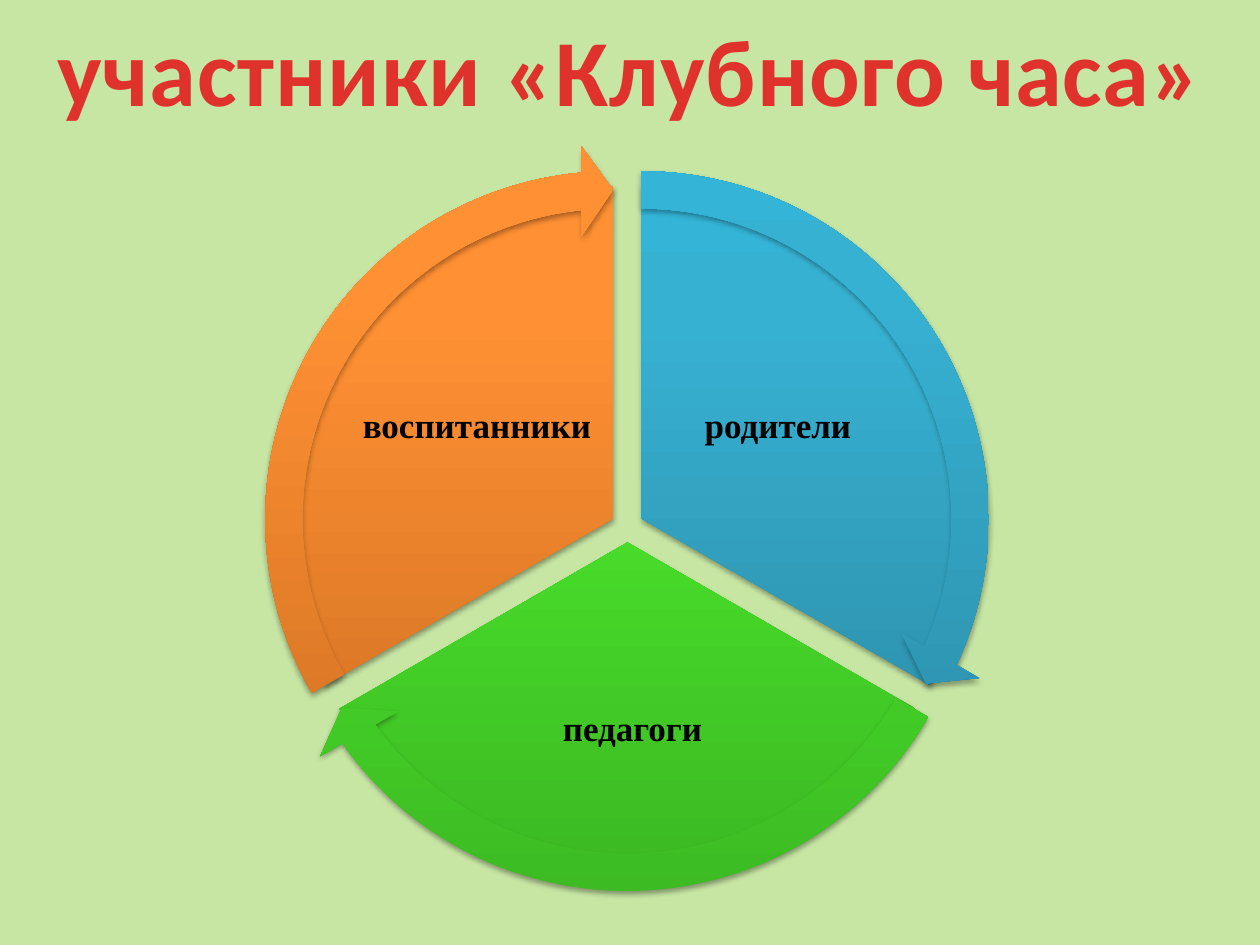
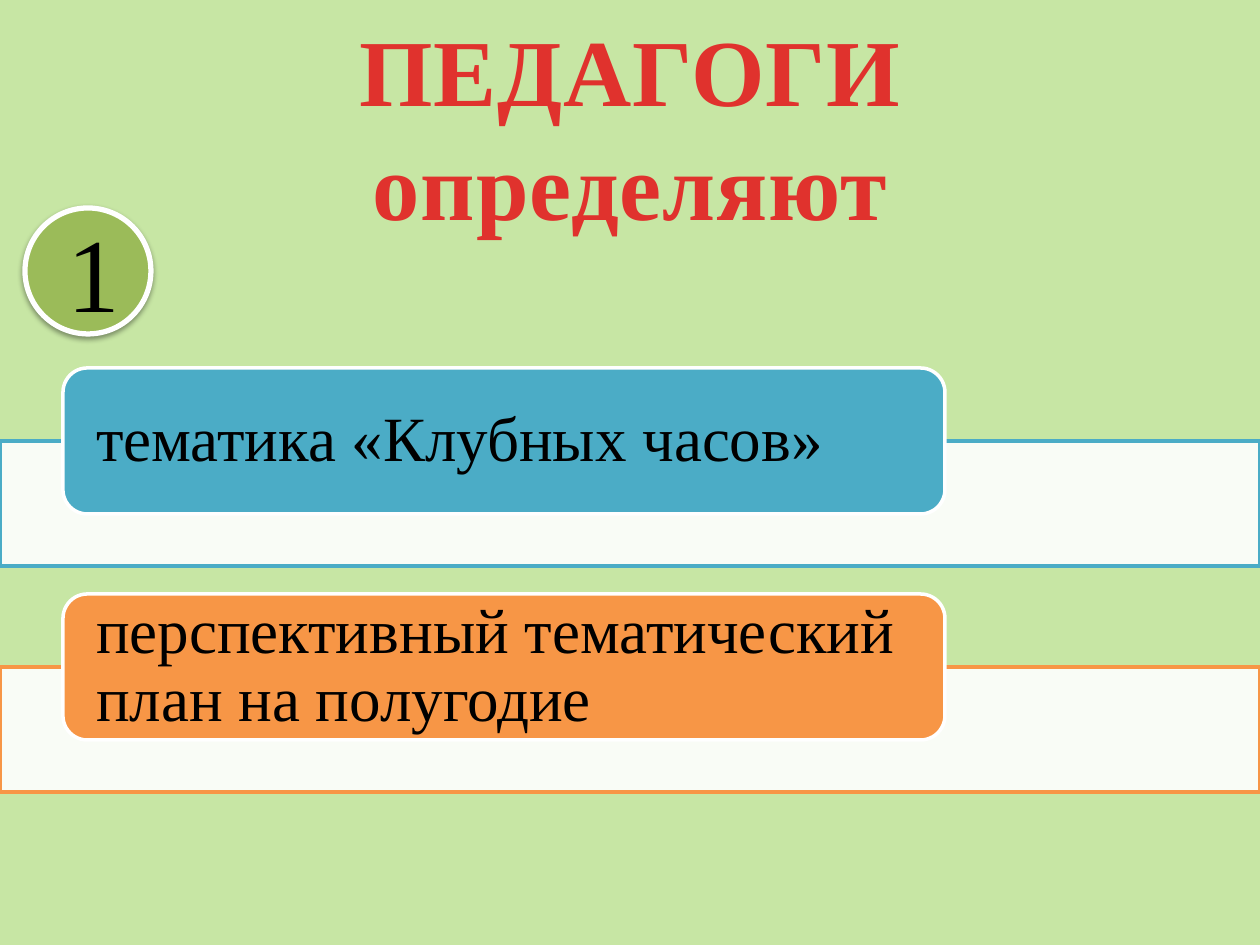
from copy import deepcopy
from dataclasses import dataclass

from lxml import etree
from pptx import Presentation
from pptx import util as u
from pptx.dml.color import RGBColor
from pptx.enum import shapes, text
from pptx.oxml.ns import qn

PX = 914400 / 126
FULL_TURN = 216
ARROW_HEAD = 3.28


@dataclass(frozen=True)
class Theme:
    """Colours, fonts and type sizes of the deck."""
    background: str = "C7E6A4"
    ink: str = "000000"
    white: str = "FFFFFF"
    blue: str = "4BACC6"
    orange: str = "F79646"
    olive: str = "9BBB59"
    title_stops: tuple = ((25, "E0322D"), (100, "A2201C"))
    blue_stops: tuple = ((0, "2A88A2"), (80, "37B1D2"), (100, "34B4D6"))
    green_stops: tuple = ((0, "3CB923"), (80, "4EF02E"), (100, "4CF52A"))
    orange_stops: tuple = ((0, "CC6E20"), (80, "FF9034"), (100, "FF9136"))
    sans: str = "Calibri"
    serif: str = "Times New Roman"
    title_size: int = 54
    label_size: int = 20
    item_size: int = 36
    number_size: int = 60


def px(*lengths):
    """Turn pixel lengths into EMU."""
    return [u.Emu(round(length * PX)) for length in lengths]


def rgb(value):
    """Turn a hex string into a colour."""
    return RGBColor.from_string(value)


def set_gradient(element, fill, stops, angle):
    """Fill with a linear gradient; the angle runs counter-clockwise."""
    fill.gradient()
    fill.gradient_angle = angle
    stop_list = element.find(".//" + qn("a:gsLst"))
    for _ in stops[2:]:
        stop_list.append(deepcopy(stop_list[-1]))
    for stop, (position, colour) in zip(fill.gradient_stops, stops):
        stop.position = position / 100
        stop.color.rgb = rgb(colour)


class Page:
    """Holds the theme and the current slide."""

    def __init__(self, deck, theme):
        """Set the background shared by all slides."""
        self.deck, self.theme, self.slide = deck, theme, None
        background = deck.slide_master.background.fill
        background.solid()
        background.fore_color.rgb = rgb(theme.background)

    def start(self, title, font, left, width):
        """Add a slide with its title."""
        theme = self.theme
        self.slide = self.deck.slides.add_slide(self.deck.slide_layouts[5])
        box = self.slide.shapes.title
        box.left, box.top, box.width, box.height = px(left, 6, width, 127)
        frame = box.text_frame
        frame.text = title
        frame.auto_size = text.MSO_AUTO_SIZE.NONE
        frame.word_wrap = False
        frame.vertical_anchor = text.MSO_ANCHOR.TOP
        for para in frame.paragraphs:
            para.alignment = text.PP_ALIGN.CENTER
            for span in para.runs:
                span.font.name, span.font.bold = font, True
                span.font.size = u.Pt(theme.title_size)
                set_gradient(span._r, span.font.fill, theme.title_stops, 270)
                span._r.get_or_add_rPr().set("spc", "50")

    def shape(self, kind, place, fill, line=None, weight=2, adjustments=()):
        """Add a preset shape with a solid or gradient fill."""
        box = self.slide.shapes.add_shape(kind, *px(*place))
        box.shadow.inherit = False
        for index, value in enumerate(adjustments):
            box.adjustments[index] = value
        if isinstance(fill, str):
            box.fill.solid()
            box.fill.fore_color.rgb = rgb(fill)
        else:
            set_gradient(box._element, box.fill, fill, 90)
        if line:
            box.line.color.rgb = rgb(line)
            box.line.width = u.Pt(weight)
        else:
            box.line.fill.background()
        return box

    def shadow(self, box, opacity, distance):
        """Drop a soft black shadow straight down."""
        effects = box._element.spPr.find(qn("a:effectLst"))
        outer = etree.SubElement(effects, qn("a:outerShdw"), blurRad=str(u.Pt(3.1)),
                                 dist=str(u.Pt(distance)), dir="5400000", rotWithShape="0")
        colour = etree.SubElement(outer, qn("a:srgbClr"), val=self.theme.ink)
        etree.SubElement(colour, qn("a:alpha"), val=str(opacity * 1000))

    def caption(self, box, words, size, align, inset=None, bold=False, spacing=None):
        """Put one paragraph in the box, centred vertically."""
        frame = box.text_frame
        frame.text = words
        frame.word_wrap = True
        frame.vertical_anchor = text.MSO_ANCHOR.MIDDLE
        if inset is not None:
            frame.margin_left, frame.margin_right = px(inset, inset)
            frame.margin_top = frame.margin_bottom = 0
        para = frame.paragraphs[0]
        para.alignment, para.line_spacing = align, spacing
        font = para.runs[0].font
        font.name, font.size, font.bold = self.theme.serif, u.Pt(size), bold
        font.color.rgb = rgb(self.theme.ink)

    def sector(self, place, stops, start, end):
        """Add one pie sector of the cycle."""
        box = self.shape(shapes.MSO_SHAPE.PIE, place, stops, adjustments=(start, end))
        self.shadow(box, 35, 1.8)

    def arrow(self, place, stops, start, end):
        """Add the circular arrow along a sector's rim."""
        turns = (0.05, ARROW_HEAD, end - ARROW_HEAD, start, 0.06)
        box = self.shape(shapes.MSO_SHAPE.CIRCULAR_ARROW, place, stops, adjustments=turns)
        self.shadow(box, 35, 1.8)

    def label(self, place, words):
        """Add a centred bold label."""
        box = self.slide.shapes.add_textbox(*px(*place))
        self.caption(box, words, self.theme.label_size, text.PP_ALIGN.CENTER, 4, True, 0.9)

    def item(self, top, words, colour):
        """Add a full-width band with a rounded box over it."""
        theme = self.theme
        band = self.shape(shapes.MSO_SHAPE.RECTANGLE, (0, top + 73, 1260, 125),
                          theme.white, colour)
        solid = band._element.spPr.find(qn("a:solidFill"))
        etree.SubElement(solid[0], qn("a:alpha"), val="90000")
        box = self.shape(shapes.MSO_SHAPE.ROUNDED_RECTANGLE, (63, top, 882, 146),
                         colour, theme.white)
        self.caption(box, words, theme.item_size, text.PP_ALIGN.LEFT, 26, spacing=0.9)

    def badge(self, number):
        """Add the round number badge."""
        theme = self.theme
        box = self.shape(shapes.MSO_SHAPE.OVAL, (25, 208, 126, 126),
                         theme.olive, theme.white, 3)
        self.shadow(box, 38, 1.6)
        self.caption(box, number, theme.number_size, text.PP_ALIGN.RIGHT)


def add_participants(page):
    """Build the cycle of the three groups of participants."""
    theme = page.theme
    page.start("участники «Клубного часа»", theme.sans, 42, 1177)
    participants = (
        ("родители", theme.blue_stops, 186, (659, 328, 238, 198)),
        ("педагоги", theme.green_stops, 210, (454, 643, 357, 174)),
        ("воспитанники", theme.orange_stops, 186, (358, 328, 238, 198)),
    )
    arrows = []
    for index, (words, stops, top, place) in enumerate(participants):
        left = 309 - 14 * index
        start = (162 + 72 * index) % FULL_TURN
        end = (start + 72) % FULL_TURN
        page.sector((left, top, 665, 665), stops, start, end)
        page.label(place, words)
        arrows.append(((left - 42, top - 41, 748, 748), stops, start, end))
    for arrow in arrows:
        page.arrow(*arrow)


def add_teachers(page):
    """Build the list of what the teachers decide."""
    theme = page.theme
    page.start("ПЕДАГОГИ\nопределяют", theme.serif, 0, 1260)
    items = (("тематика «Клубных часов»", theme.blue),
             ("перспективный тематический план на полугодие", theme.orange))
    for index, (words, colour) in enumerate(items):
        page.item(368 + 226 * index, words, colour)
    page.badge("1")


def main():
    """Build and save the deck."""
    deck = Presentation()
    deck.slide_width, deck.slide_height = px(1260, 945)
    page = Page(deck, Theme())
    add_participants(page)
    add_teachers(page)
    deck.save("out.pptx")


if __name__ == "__main__":
    main()
